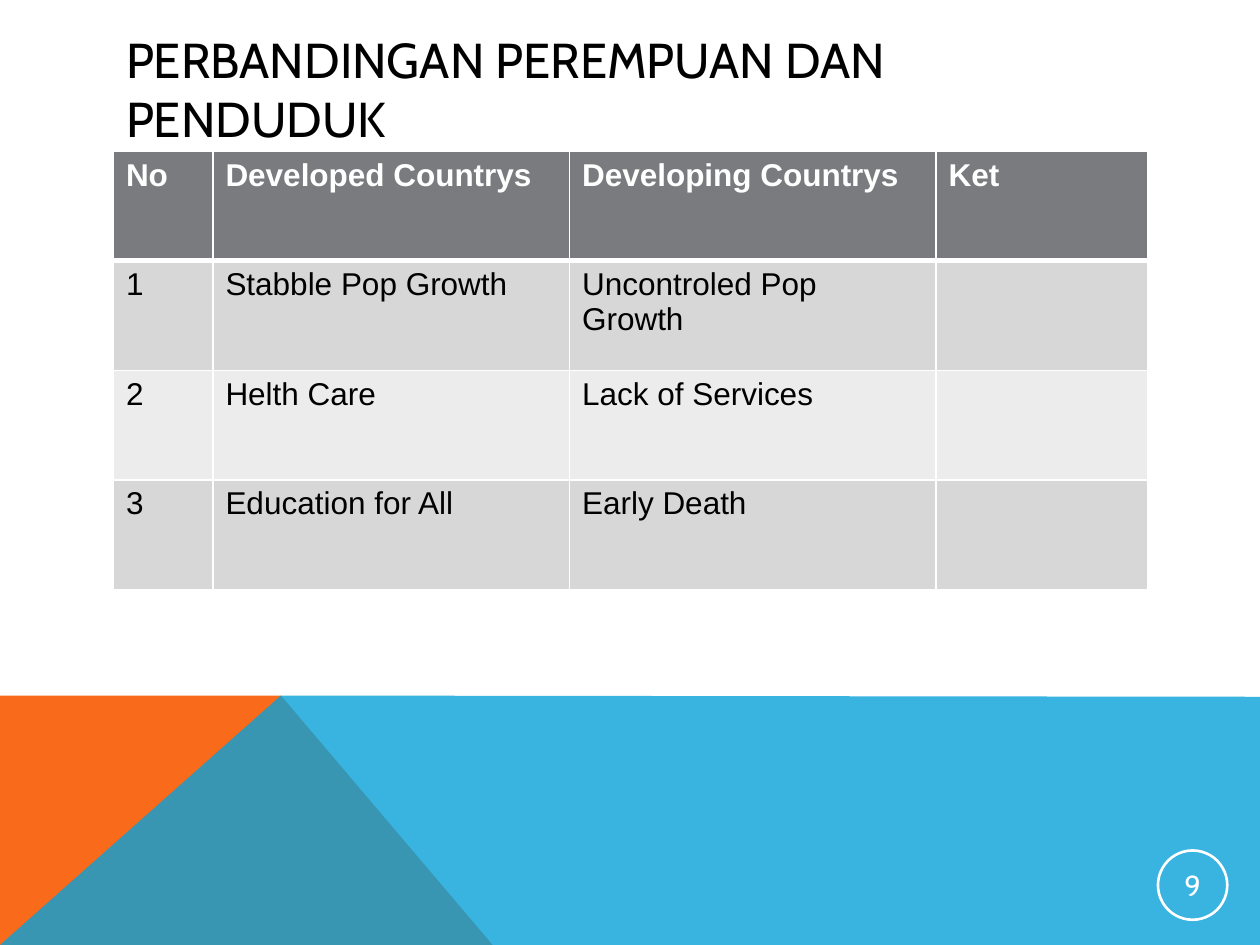
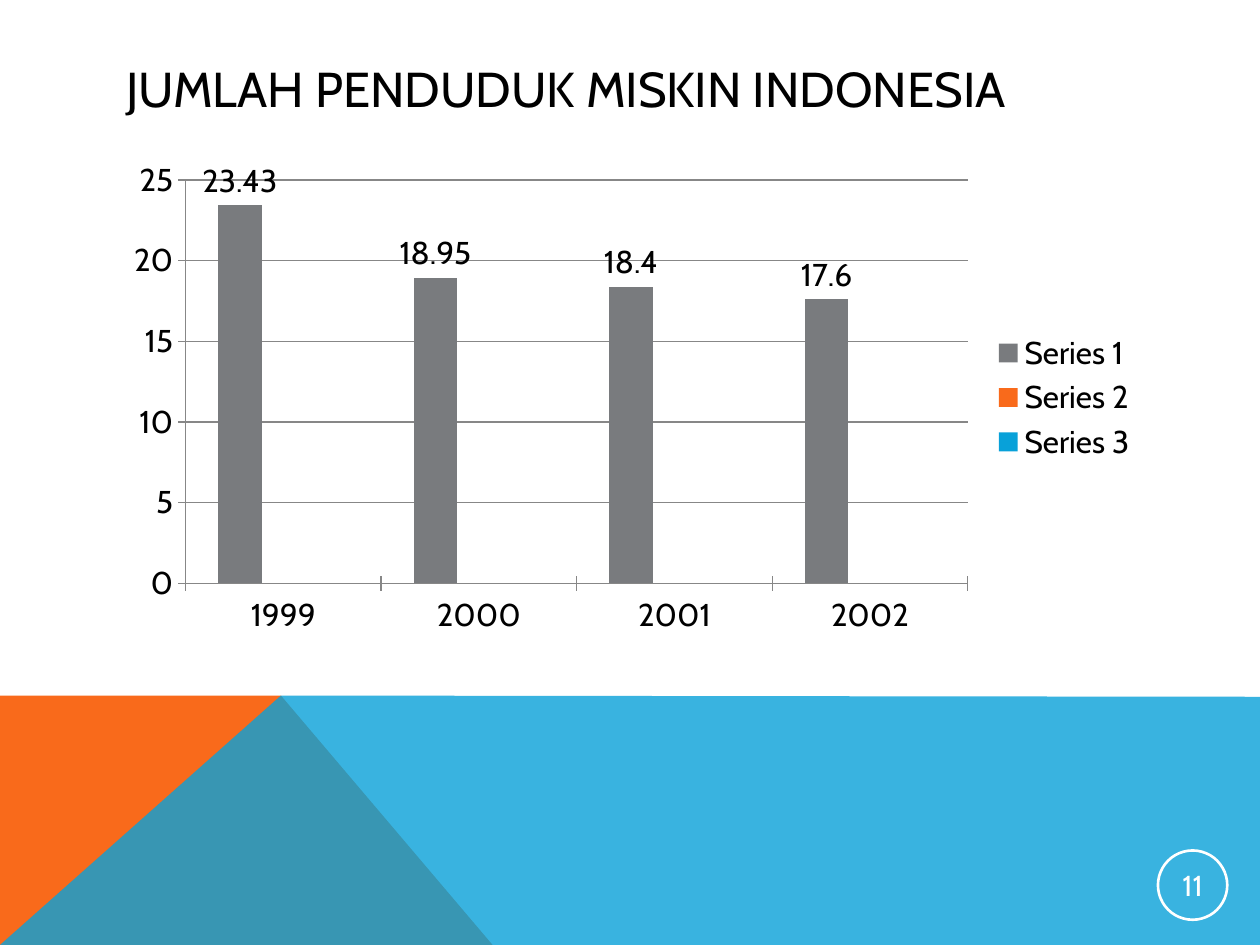
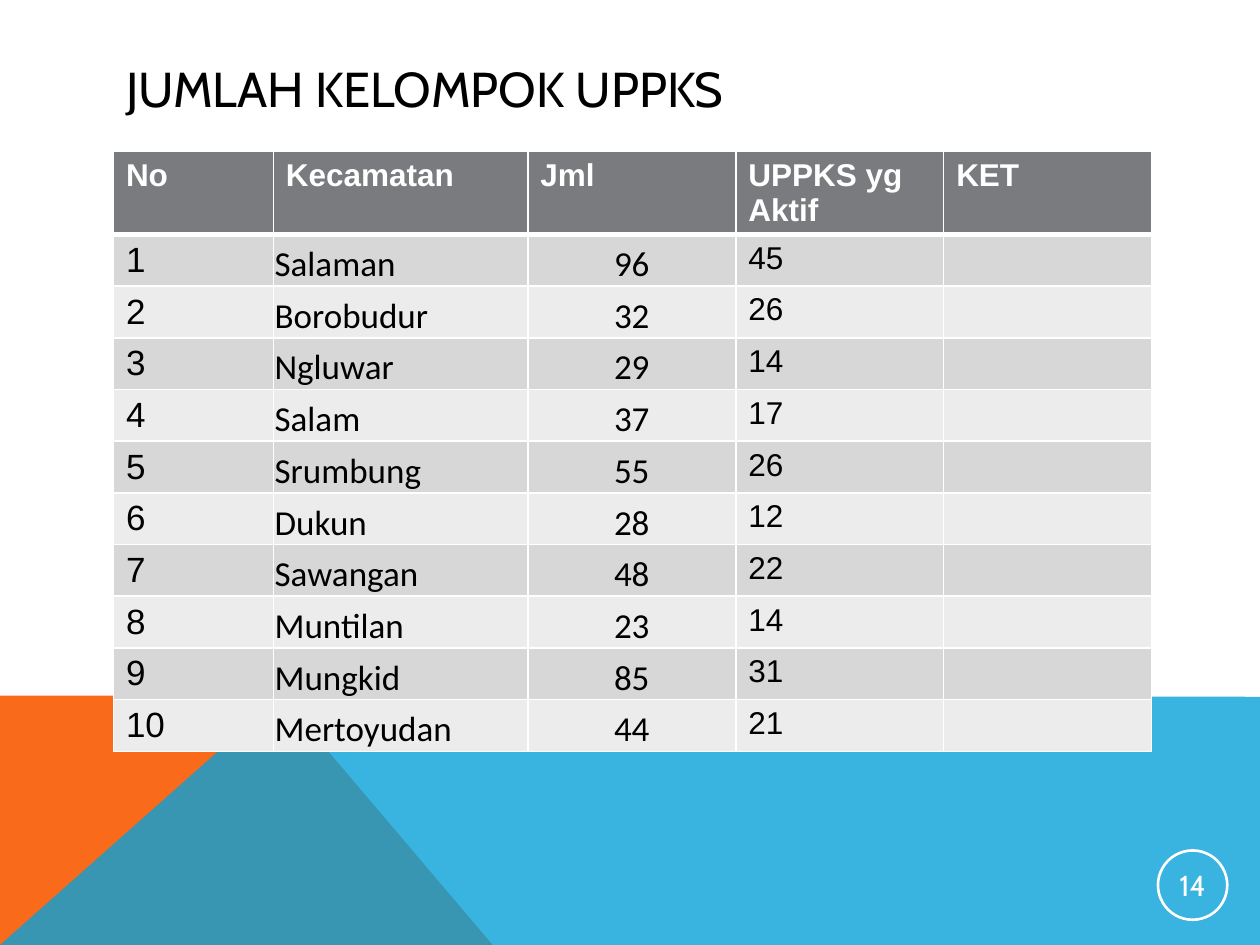
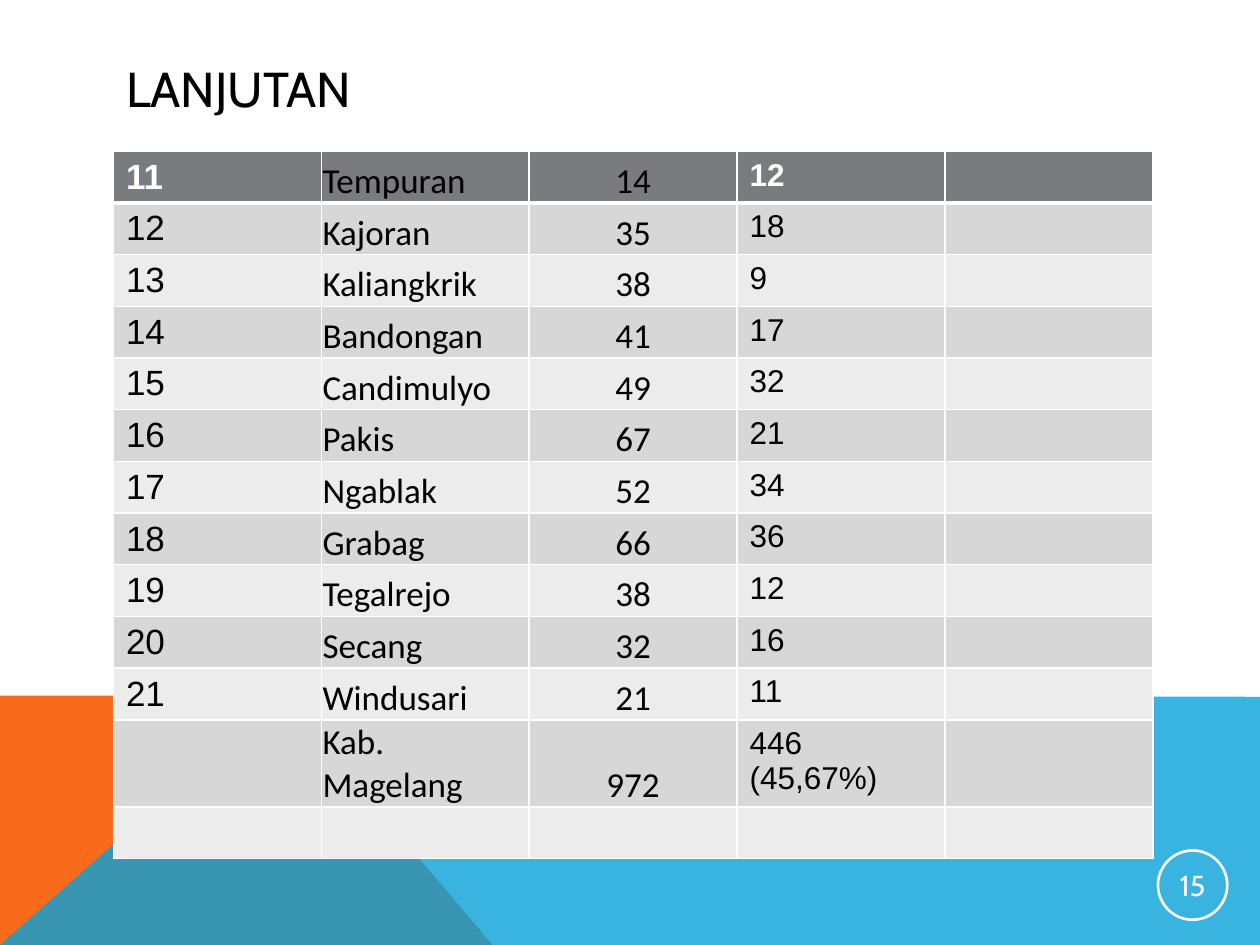
"""Build four slides of population tables and a poverty chart with a shared band design."""
import dataclasses
import typing

import lxml.etree
import pptx
import pptx.chart.data
import pptx.dml.color
import pptx.enum.chart
import pptx.enum.shapes
import pptx.enum.text
import pptx.oxml.ns
import pptx.slide
import pptx.table
import pptx.text.text
import pptx.util

Inches = pptx.util.Inches
Pt = pptx.util.Pt
qn = pptx.oxml.ns.qn
Align = pptx.enum.text.PP_ALIGN
Anchor = pptx.enum.text.MSO_ANCHOR


@dataclasses.dataclass(frozen=True)
class Theme:
    black: str = "000000"
    white: str = "FFFFFF"
    orange: str = "F96A1B"
    blue: str = "08A1D9"
    gray: str = "797B7E"
    grid: str = "878787"
    row_fills: tuple[str, str] = ("D7D7D8", "ECECEC")
    display_font: str = "Cabin"
    table_font: str = "Arial"
    name_font: str = "Calibri"
    title_size: float = 28
    body_size: float = 18
    large_size: float = 20
    number_size: float = 16.5


THEME = Theme()


@dataclasses.dataclass(frozen=True)
class TextStyle:
    font: str
    size: float
    color: str = THEME.black
    bold: bool = False


@dataclasses.dataclass(frozen=True)
class ColumnStyle:
    text: TextStyle
    tight: bool = False
    align: Align = Align.LEFT


@dataclasses.dataclass(frozen=True)
class Band:
    points: tuple[tuple[float, float], ...]
    color: str
    opacity: int = 100


@dataclasses.dataclass(frozen=True)
class TablePage:
    title: str
    number: int
    widths: tuple[float, ...]
    row_height: float
    columns: tuple[ColumnStyle, ...]
    rows: tuple[tuple[str, ...], ...]
    has_headings: bool = True


@dataclasses.dataclass(frozen=True)
class ChartPage:
    title: str
    number: int
    categories: tuple[str, ...]
    series: tuple[tuple[str, tuple[float | None, ...], str], ...]


LEFT, TOP, WIDTH = 0.9, 1.2, 8.23
TITLE_STYLE = TextStyle(THEME.display_font, THEME.title_size)
NUMBER_STYLE = TextStyle(THEME.display_font, THEME.number_size, THEME.white)
HEADING = ColumnStyle(TextStyle(THEME.table_font, THEME.body_size, THEME.white, True))
PLAIN = ColumnStyle(TextStyle(THEME.table_font, THEME.body_size))
LARGE = ColumnStyle(TextStyle(THEME.table_font, THEME.large_size))
NAME = ColumnStyle(TextStyle(THEME.name_font, THEME.large_size), tight=True)
COUNT = dataclasses.replace(NAME, align=Align.CENTER)
DISTRICT_COLUMNS = (LARGE, NAME, COUNT, PLAIN, PLAIN)

BANDS = (
    Band(((0, 7.5), (0, 5.52), (2.23, 5.52), (3.91, 7.5)), THEME.orange),
    Band(((0, 7.5), (2.23, 5.52), (10, 5.53), (10, 7.5)), THEME.blue, 80),
)

PAGES = (
    TablePage(
        "PERBANDINGAN PEREMPUAN DAN PENDUDUK", 9, (0.79, 2.83, 2.91, 1.68), 0.87, (PLAIN,) * 4,
        (
            ("No", "Developed Countrys", "Developing Countrys", "Ket"),
            ("1", "Stabble Pop Growth", "Uncontroled Pop Growth", ""),
            ("2", "Helth Care", "Lack of Services", ""),
            ("3", "Education for All", "Early Death", ""),
        ),
    ),
    ChartPage(
        "JUMLAH PENDUDUK MISKIN INDONESIA", 11, ("1999", "2000", "2001", "2002"),
        (
            ("Series 1", (23.43, 18.95, 18.4, 17.6), THEME.gray),
            ("Series 2", (None,) * 4, THEME.orange),
            ("Series 3", (None,) * 4, THEME.blue),
        ),
    ),
    TablePage(
        "JUMLAH KELOMPOK UPPKS", 14, (1.27, 2.02, 1.65, 1.65, 1.65), 0.41, DISTRICT_COLUMNS,
        (
            ("No", "Kecamatan", "Jml", "UPPKS yg Aktif", "KET"),
            ("1", "Salaman", "96", "45", ""),
            ("2", "Borobudur", "32", "26", ""),
            ("3", "Ngluwar", "29", "14", ""),
            ("4", "Salam", "37", "17", ""),
            ("5", "Srumbung", "55", "26", ""),
            ("6", "Dukun", "28", "12", ""),
            ("7", "Sawangan", "48", "22", ""),
            ("8", "Muntilan", "23", "14", ""),
            ("9", "Mungkid", "85", "31", ""),
            ("10", "Mertoyudan", "44", "21", ""),
        ),
    ),
    TablePage(
        "LANJUTAN", 15, (1.65,) * 5, 0.41, DISTRICT_COLUMNS,
        (
            ("11", "Tempuran", "14", "12", ""),
            ("12", "Kajoran", "35", "18", ""),
            ("13", "Kaliangkrik", "38", "9", ""),
            ("14", "Bandongan", "41", "17", ""),
            ("15", "Candimulyo", "49", "32", ""),
            ("16", "Pakis", "67", "21", ""),
            ("17", "Ngablak", "52", "34", ""),
            ("18", "Grabag", "66", "36", ""),
            ("19", "Tegalrejo", "38", "12", ""),
            ("20", "Secang", "32", "16", ""),
            ("21", "Windusari", "21", "11", ""),
            ("", "Kab. Magelang", "972", "446 (45,67%)", ""),
            ("",) * 5,
        ),
        has_headings=False,
    ),
)


def rgb(color: str) -> pptx.dml.color.RGBColor:
    return pptx.dml.color.RGBColor.from_string(color)


def format_font(font: pptx.text.text.Font, style: TextStyle) -> None:
    font.name = style.font
    font.size = Pt(style.size)
    font.bold = style.bold
    font.color.rgb = rgb(style.color)


def add_text(frame: pptx.text.text.TextFrame, text: str, style: TextStyle, align: Align) -> None:
    paragraph = frame.paragraphs[0]
    paragraph.alignment = align
    run = paragraph.add_run()
    run.text = text
    format_font(run.font, style)


def move_bands_to_layout(slide: pptx.slide.Slide) -> None:
    for index, band in enumerate(BANDS):
        points = [(Inches(x), Inches(y)) for x, y in band.points]
        builder = slide.shapes.build_freeform(*points[0])
        builder.add_line_segments(points[1:], close=True)
        shape = builder.convert_to_shape()
        shape.shadow.inherit = False
        shape.fill.solid()
        shape.fill.fore_color.rgb = rgb(band.color)
        shape.line.fill.background()
        if band.opacity < 100:
            color = shape.element.xpath("./p:spPr/a:solidFill/a:srgbClr")[0]
            lxml.etree.SubElement(color, qn("a:alpha"), val=str(band.opacity * 1000))
        shape.element.xpath("./p:nvSpPr/p:cNvPr")[0].set("id", str(20 + index))
        slide.slide_layout.shapes.element.insert(2 + index, shape.element)


def add_title(slide: pptx.slide.Slide, text: str) -> None:
    title = slide.shapes.title
    title.left, title.top, title.width, title.height = map(Inches, (LEFT, 0.4, 8.22, 0.6))
    frame = title.text_frame
    frame.word_wrap = True
    frame.auto_size = pptx.enum.text.MSO_AUTO_SIZE.NONE
    frame.vertical_anchor = Anchor.MIDDLE
    add_text(frame, text, TITLE_STYLE, Align.LEFT)


def add_number(slide: pptx.slide.Slide, number: int) -> None:
    circle = slide.shapes.add_shape(
        pptx.enum.shapes.MSO_SHAPE.OVAL, Inches(9.19), Inches(6.75), Inches(0.55), Inches(0.55))
    circle.shadow.inherit = False
    circle.fill.background()
    circle.line.color.rgb = rgb(THEME.white)
    circle.line.width = Pt(1.5)
    frame = circle.text_frame
    frame.margin_left = frame.margin_top = frame.margin_right = frame.margin_bottom = Inches(0.01)
    frame.vertical_anchor = Anchor.MIDDLE
    add_text(frame, str(number), NUMBER_STYLE, Align.CENTER)


def add_borders(cell: pptx.table._Cell, bottom_width: float) -> None:
    properties = cell._tc.get_or_add_tcPr()
    for side, width in (("L", 1), ("R", 1), ("T", 1), ("B", bottom_width)):
        line = lxml.etree.SubElement(properties, qn(f"a:ln{side}"), w=str(Pt(width)))
        fill = lxml.etree.SubElement(line, qn("a:solidFill"))
        lxml.etree.SubElement(fill, qn("a:srgbClr"), val=THEME.white)


def cell_style(page: TablePage, row: int, column: int) -> ColumnStyle:
    style = page.columns[column]
    if row > 0:
        return style
    if page.has_headings:
        return HEADING
    if style.tight:
        return style
    return dataclasses.replace(
        style, text=dataclasses.replace(style.text, color=THEME.white, bold=True))


def fill_cell(cell: pptx.table._Cell, text: str, style: ColumnStyle, row: int) -> None:
    add_borders(cell, 1 if row else 3)
    cell.fill.solid()
    cell.fill.fore_color.rgb = rgb(THEME.row_fills[(row - 1) % 2] if row else THEME.gray)
    if not text:
        return
    if style.tight:
        cell.vertical_anchor = Anchor.BOTTOM
        cell.margin_left = cell.margin_top = cell.margin_right = Inches(0.01)
        cell.margin_bottom = Inches(0)
    add_text(cell.text_frame, text, style.text, style.align)


def add_table(slide: pptx.slide.Slide, page: TablePage) -> None:
    height = page.row_height * len(page.rows)
    table = slide.shapes.add_table(
        len(page.rows), len(page.widths),
        Inches(LEFT), Inches(TOP), Inches(WIDTH), Inches(height)).table
    table.horz_banding = False
    for column, width in zip(table.columns, page.widths):
        column.width = Inches(width)
    for row_index, texts in enumerate(page.rows):
        table.rows[row_index].height = Inches(page.row_height)
        for column_index, text in enumerate(texts):
            style = cell_style(page, row_index, column_index)
            fill_cell(table.cell(row_index, column_index), text, style, row_index)


def add_chart(slide: pptx.slide.Slide, page: ChartPage) -> None:
    data = pptx.chart.data.CategoryChartData()
    data.categories = page.categories
    for name, values, _ in page.series:
        data.add_series(name, values)
    chart = slide.shapes.add_chart(
        pptx.enum.chart.XL_CHART_TYPE.COLUMN_CLUSTERED,
        Inches(LEFT), Inches(TOP), Inches(WIDTH), Inches(3.91), data).chart
    format_font(chart.font, TextStyle(THEME.display_font, THEME.body_size))
    chart.has_title = False
    chart.has_legend = True
    chart.legend.position = pptx.enum.chart.XL_LEGEND_POSITION.RIGHT
    chart.legend.include_in_layout = False
    for axis in (chart.category_axis, chart.value_axis):
        axis.major_tick_mark = pptx.enum.chart.XL_TICK_MARK.CROSS
        axis.format.line.color.rgb = rgb(THEME.grid)
    chart.value_axis.has_major_gridlines = True
    chart.value_axis.major_gridlines.format.line.color.rgb = rgb(THEME.grid)
    plot = chart.plots[0]
    plot.vary_by_categories = False
    plot.gap_width = 150
    plot.overlap = 0
    for series, (_, _, color) in zip(plot.series, page.series):
        series.format.fill.solid()
        series.format.fill.fore_color.rgb = rgb(color)
    labels = plot.series[0].data_labels
    labels.show_value = True
    labels.position = pptx.enum.chart.XL_LABEL_POSITION.OUTSIDE_END


def add_page(presentation: typing.Any, page: TablePage | ChartPage) -> pptx.slide.Slide:
    slide = presentation.slides.add_slide(presentation.slide_layouts.get_by_name("Title Only"))
    add_title(slide, page.title)
    if isinstance(page, TablePage):
        add_table(slide, page)
    else:
        add_chart(slide, page)
    add_number(slide, page.number)
    return slide


def main() -> None:
    presentation = pptx.Presentation()
    presentation.slide_width = Inches(10)
    presentation.slide_height = Inches(7.5)
    slides = [add_page(presentation, page) for page in PAGES]
    move_bands_to_layout(slides[0])
    presentation.save("out.pptx")


if __name__ == "__main__":
    main()
